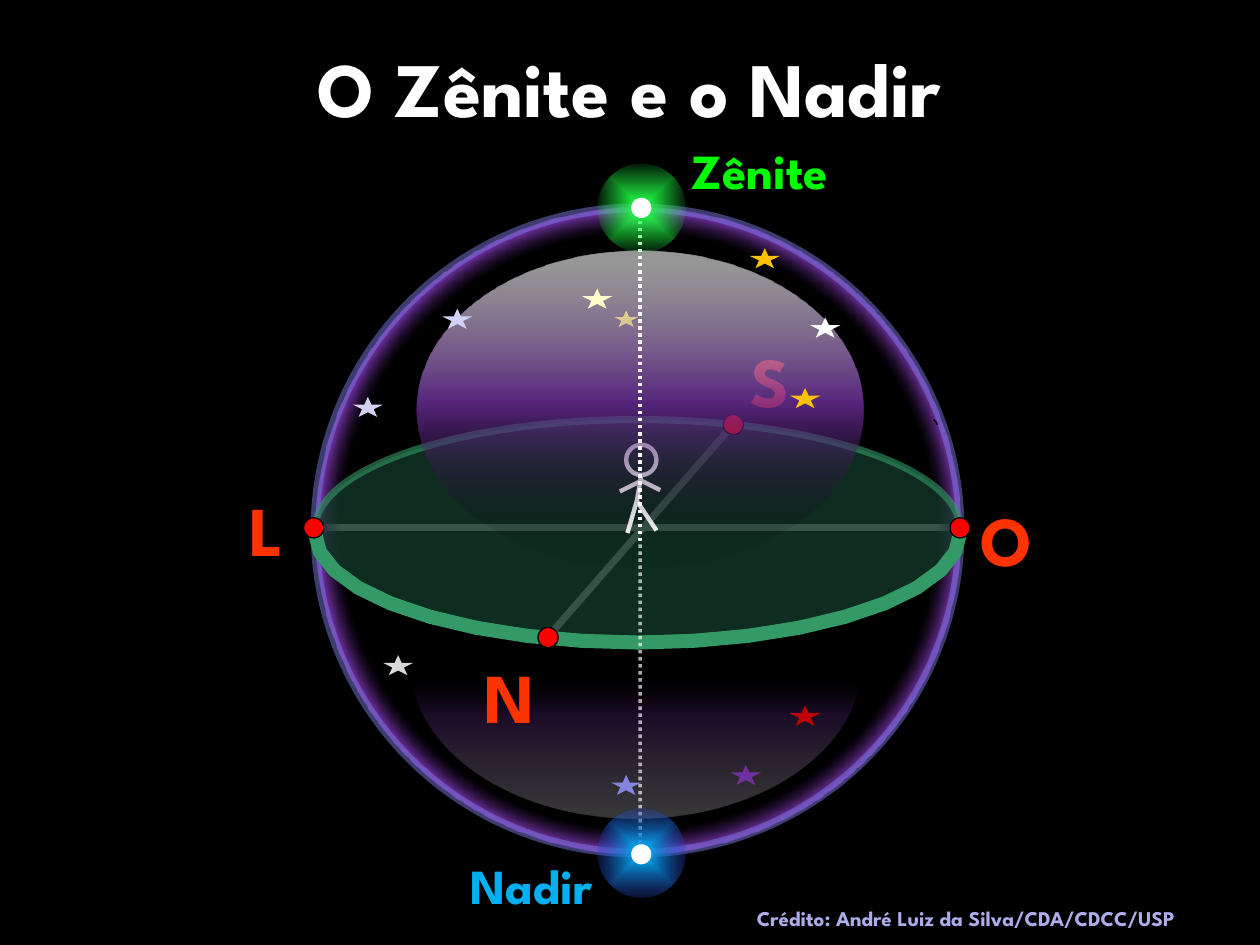
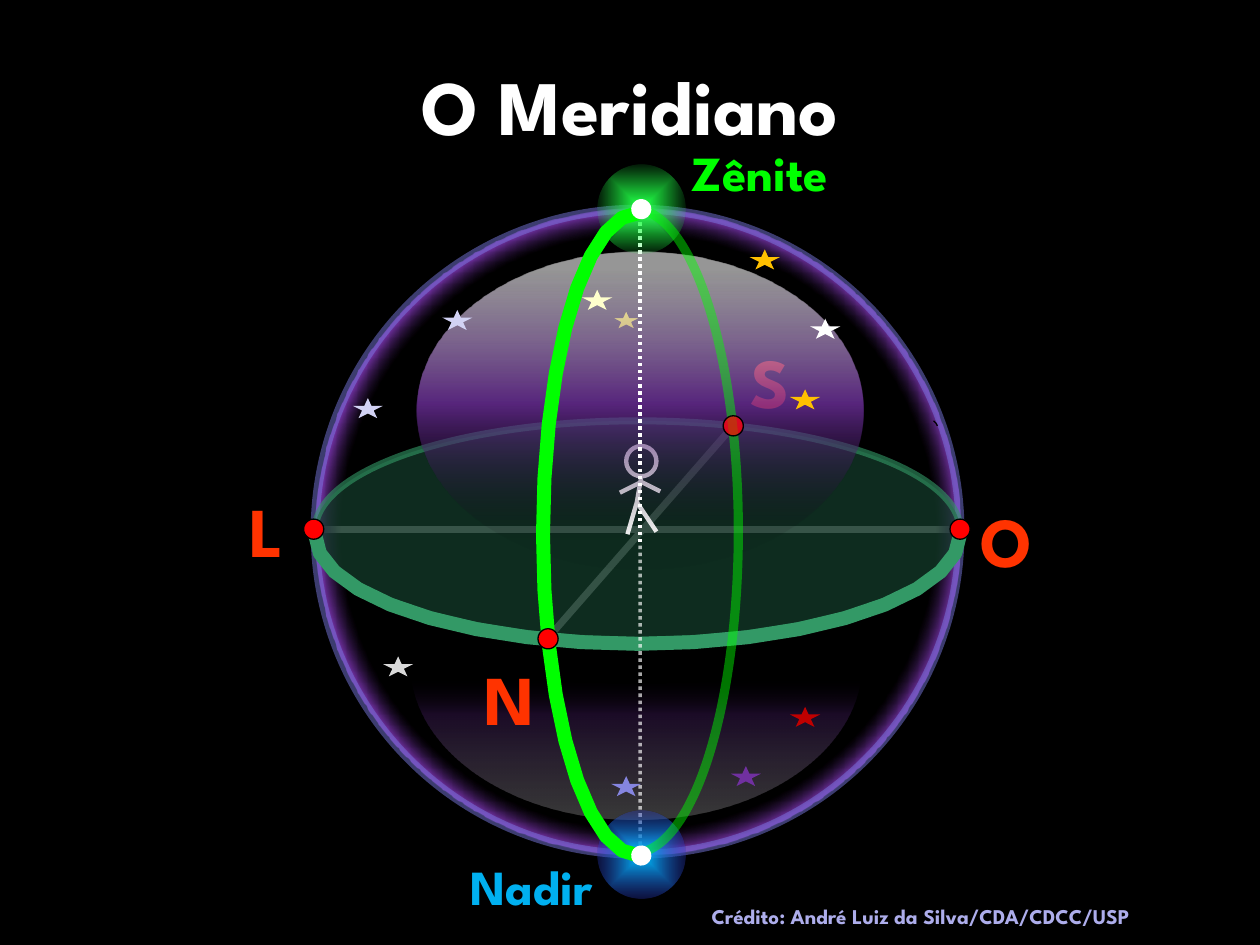
from math import cos, radians, sin

from lxml import etree
from pptx import Presentation
from pptx.dml.color import RGBColor
from pptx.enum.dml import MSO_LINE
from pptx.enum.shapes import MSO_CONNECTOR, MSO_SHAPE
from pptx.enum.text import MSO_ANCHOR, MSO_AUTO_SIZE, PP_ALIGN
from pptx.oxml.ns import qn
from pptx.util import Inches, Pt

OVAL, STAR = MSO_SHAPE.OVAL, MSO_SHAPE.STAR_5_POINT
MOON, ARC = MSO_SHAPE.MOON, MSO_SHAPE.ARC
STRAIGHT = MSO_CONNECTOR.STRAIGHT
DOTTED = MSO_LINE.ROUND_DOT
LEFT, CENTER = PP_ALIGN.LEFT, PP_ALIGN.CENTER
MIDDLE = MSO_ANCHOR.MIDDLE

FONT = "League Spartan"
COLORS = {
    "black": "000000", "white": "FFFFFF", "purple": "7030A0", "rim": "7878DE",
    "label": "FF3300", "point": "FF0000", "ground": "143C2B", "horizon": "339966",
    "zenith": "00FF00", "glow": "21FF46", "nadir": "00B0F0", "deep": "2D2DB9",
    "credit": "ADADEB", "yellow": "FFFF00", "pale": "D2D2F4", "gold": "FFC000",
    "cream": "FFFFCC", "red": "C00000", "blue": "8585E0", "gray": "D9D9D9",
}
CREDIT = "Crédito: André Luiz da Silva/CDA/CDCC/USP"

LEFT_EDGE = 2.5
SIZE = 5.12
DOT = 0.16
TILT = 305.7
AXIS = 2.58
ZENITH, NADIR = (2.51, -0.08), (2.51, 5.05)

# Lengths below are measured from the sphere's top left corner.
LETTERS = {"L": (-0.62, 2.16), "S": (3.36, 0.98), "O": (5.18, 2.24), "N": (1.25, 3.49)}
POINTS = {"L": (-0.09, 2.46), "S": (3.24, 1.64), "N": (1.77, 3.33), "O": (5.04, 2.46)}
LIMBS = [
    (2.59, 2.12, 2.55, 2.35),
    (2.55, 2.32, 2.71, 2.56),
    (2.55, 2.34, 2.48, 2.58),
    (2.58, 2.16, 2.74, 2.24),
    (2.42, 2.25, 2.58, 2.17),
]
STARS = [
    (0.3, 1.5, "pale"), (1.01, 0.8, "pale"), (3.77, 1.43, "gold"),
    (3.45, 0.32, "gold"), (3.93, 0.87, "white"), (2.12, 0.64, "cream"),
    (3.3, 4.42, "purple"), (3.77, 3.95, "red"), (2.35, 4.5, "blue"),
    (0.54, 3.55, "gray"),
]


def tint(color, name, alpha=100):
    """Set a colour format, and its opacity in percent."""
    color.rgb = RGBColor.from_string(COLORS[name])
    if alpha < 100:
        rgb = color._xFill.find(qn("a:srgbClr"))
        etree.SubElement(rgb, qn("a:alpha"), val=str(alpha * 1000))


def blend(shape, stops, angle=None, kind="circle"):
    """Fill with (place, colour, opacity) stops: linear if an angle is given."""
    shape.fill.background()
    grad = etree.Element(qn("a:gradFill"), rotWithShape="1")
    steps = etree.SubElement(grad, qn("a:gsLst"))
    for place, name, alpha in stops:
        stop = etree.SubElement(steps, qn("a:gs"), pos=str(place * 1000))
        rgb = etree.SubElement(stop, qn("a:srgbClr"), val=COLORS[name])
        etree.SubElement(rgb, qn("a:alpha"), val=str(alpha * 1000))
    if angle is None:
        route = etree.SubElement(grad, qn("a:path"), attrib={"path": kind})
        sides = dict.fromkeys("ltrb", "50000")
        etree.SubElement(route, qn("a:fillToRect"), attrib=sides)
    else:
        etree.SubElement(grad, qn("a:lin"), ang=str(angle * 60000), scaled="0")
    props = shape._element.spPr
    props.replace(props.find(qn("a:noFill")), grad)


def style(shape, fill=None, line=None):
    """Fill is (colour, opacity); line is (colour, points, opacity)."""
    shape.shadow.inherit = False
    if fill:
        shape.fill.solid()
        tint(shape.fill.fore_color, *fill)
    else:
        shape.fill.background()
    if line:
        name, width, alpha = line
        shape.line.width = Pt(width)
        tint(shape.line.color, name, alpha)
    else:
        shape.line.fill.background()
    return shape


def write(frame, text, size, name, align):
    frame.word_wrap = True
    frame.text = text
    para = frame.paragraphs[0]
    para.alignment = align
    para.font.name, para.font.size, para.font.bold = FONT, Pt(size), True
    tint(para.font.color, name)


class Stage:
    """Draws on a slide with lengths measured from one corner."""

    def __init__(self, slide, left, top):
        self.shapes, self.left, self.top = slide.shapes, left, top

    def spot(self, x, y):
        return Inches(self.left + x), Inches(self.top + y)

    def shape(self, kind, x, y, w, h, fill=None, line=None, turn=0):
        item = self.shapes.add_shape(kind, *self.spot(x, y), Inches(w), Inches(h))
        item.rotation = turn
        return style(item, fill, line)

    def line(self, x1, y1, x2, y2, width, alpha=100, dash=None):
        item = self.shapes.add_connector(STRAIGHT, *self.spot(x1, y1), *self.spot(x2, y2))
        item.line.width = Pt(width)
        tint(item.line.color, "white", alpha)
        if dash:
            item.line.dash_style = dash
        etree.SubElement(item._element.spPr, qn("a:effectLst"))

    def trace(self, spots, fill=None, line=None):
        first, *rest = [self.spot(*spot) for spot in spots]
        path = self.shapes.build_freeform(*first)
        path.add_line_segments(rest, close=False)
        return style(path.convert_to_shape(), fill, line)

    def half(self, x, y, rx, ry, start, fill=None, line=None):
        """Half an ellipse, anticlockwise from the start angle in degrees."""
        turns = [radians(start - 10 * i) for i in range(19)]
        self.trace([(x + rx * cos(a), y + ry * sin(a)) for a in turns], fill, line)

    def text(self, x, y, w, h, text, size, name, align=LEFT):
        box = self.shapes.add_textbox(*self.spot(x, y), Inches(w), Inches(h))
        write(box.text_frame, text, size, name, align)

    def point(self, place, alpha=100):
        self.shape(OVAL, *POINTS[place], DOT, DOT, ("point", alpha), ("black", 0.75, 100))


def draw_title(slide, top, text):
    title = slide.shapes.title
    title.left, title.top = Inches(0.75), Inches(top)
    title.width, title.height = Inches(8.5), Inches(1.25)
    frame = title.text_frame
    frame.auto_size = MSO_AUTO_SIZE.NONE
    frame.vertical_anchor = MIDDLE
    write(frame, text, 44, "white", CENTER)


def draw_letter(stage, letter):
    stage.text(*LETTERS[letter], 0.39, 0.77, letter, 40, "label")


def draw_globe(stage):
    moon = stage.shape(MOON, 1.93, 2.44, 1.23, 3.58, turn=270)
    moon.adjustments[0] = 0.875
    blend(moon, [(3, "white", 37), (68, "purple", 41), (94, "black", 0)], 0)
    stage.line(1.8, 3.46, 3.32, 1.72, 4)
    stage.line(0, 2.54, SIZE, 2.54, 4)
    ball = stage.shape(OVAL, 0, 0, SIZE, SIZE, line=("rim", 5, 50))
    blend(ball, [(65, "black", 40), (70, "purple", 100)])
    for letter in "LSO":
        draw_letter(stage, letter)
    stage.shape(OVAL, 0, 1.68, SIZE, 1.74, ("ground", 73), ("horizon", 4, 60))
    draw_letter(stage, "N")
    tick = [(4.94, 1.72), (4.93, 1.7), (4.91, 1.68)]
    stage.trace(tick, line=("black", 0.75, 100))
    stage.half(SIZE / 2, 2.58, SIZE / 2, 0.87, 180, ("ground", 7), ("horizon", 8, 100))


def draw_person(stage):
    stage.shape(OVAL, 2.47, 1.88, 0.24, 0.24, line=("white", 2.5, 100))
    for limb in LIMBS:
        stage.line(*limb, 2.5)


def draw_sky(stage):
    dome = stage.shape(OVAL, 0.81, 0.34, 3.54, 2.52)
    blend(dome, [(6, "white", 58), (48, "purple", 77), (91, "black", 2)], 90)
    for x, y, name in STARS:
        stage.shape(STAR, x, y, 0.24, DOT, (name,))


def draw_poles(stage, edge):
    """Edge is the place and opacity of the outer stop of the nadir's glow."""
    stage.line(AXIS, -0.01, AXIS, 2.67, 2, dash=DOTTED)
    glow = stage.shape(OVAL, 2.24, -0.35, 0.7, 0.7, turn=TILT)
    blend(glow, [(7, "glow", 100), (77, "glow", 2)], kind="shape")
    stage.text(2.67, -0.58, 1.72, 0.57, "Zênite", 28, "zenith", CENTER)
    stage.line(AXIS, 2.67, AXIS, 5.19, 2, alpha=65, dash=DOTTED)
    stage.text(0.86, 5.09, 1.72, 0.57, "Nadir", 28, "nadir", CENTER)
    glow = stage.shape(OVAL, 2.24, 4.77, 0.7, 0.7, turn=TILT)
    place, alpha = edge
    blend(glow, [(7, "nadir", 100), (place, "deep", alpha)], kind="shape")


def draw_sphere(stage, edge):
    draw_globe(stage)
    stage.shape(STAR, 2.35, 0.8, 0.24, DOT, ("yellow",), ("black", 0.75, 100))
    draw_person(stage)
    for place in "LSO":
        stage.point(place)
    draw_sky(stage)
    draw_poles(stage, edge)


def draw_meridian(stage):
    back = stage.shape(ARC, 1.71, 0, 1.65, 5.11, line=("zenith", 5.25, 46))
    back.adjustments[0], back.adjustments[1] = 162.45, 54.84
    stage.half(2.57, 2.58, 0.76, 2.55, 270, line=("zenith", 8, 100))
    stage.point("S", 65)


def draw_marks(stage):
    """The dots that lie in front of every curve."""
    stage.point("N")
    for place in (ZENITH, NADIR):
        stage.shape(OVAL, *place, DOT, DOT, ("white",), turn=TILT)


def add_slide(deck, title, head, top, edge, credit, full=False):
    """Head and top place the title and the sphere; full adds the meridian."""
    slide = deck.slides.add_slide(deck.slide_layouts[5])
    slide.background.fill.solid()
    tint(slide.background.fill.fore_color, "black")
    draw_title(slide, head, title)
    stage = Stage(slide, LEFT_EDGE, top)
    draw_sphere(stage, edge)
    if full:
        draw_meridian(stage)
    draw_marks(stage)
    Stage(slide, 0, 0).text(*credit, 0.3, CREDIT, 12, "credit")


def main():
    deck = Presentation()
    deck.slide_width, deck.slide_height = Inches(10), Inches(7.5)
    add_slide(deck, "O Zênite e o Nadir", 0.06, 1.65, (83, 13), (5.91, 7.14, 4.06))
    add_slide(deck, "O Meridiano", 0.21, 1.66, (77, 26), (5.55, 7.12, 4.45), full=True)
    deck.save("out.pptx")


if __name__ == "__main__":
    main()
